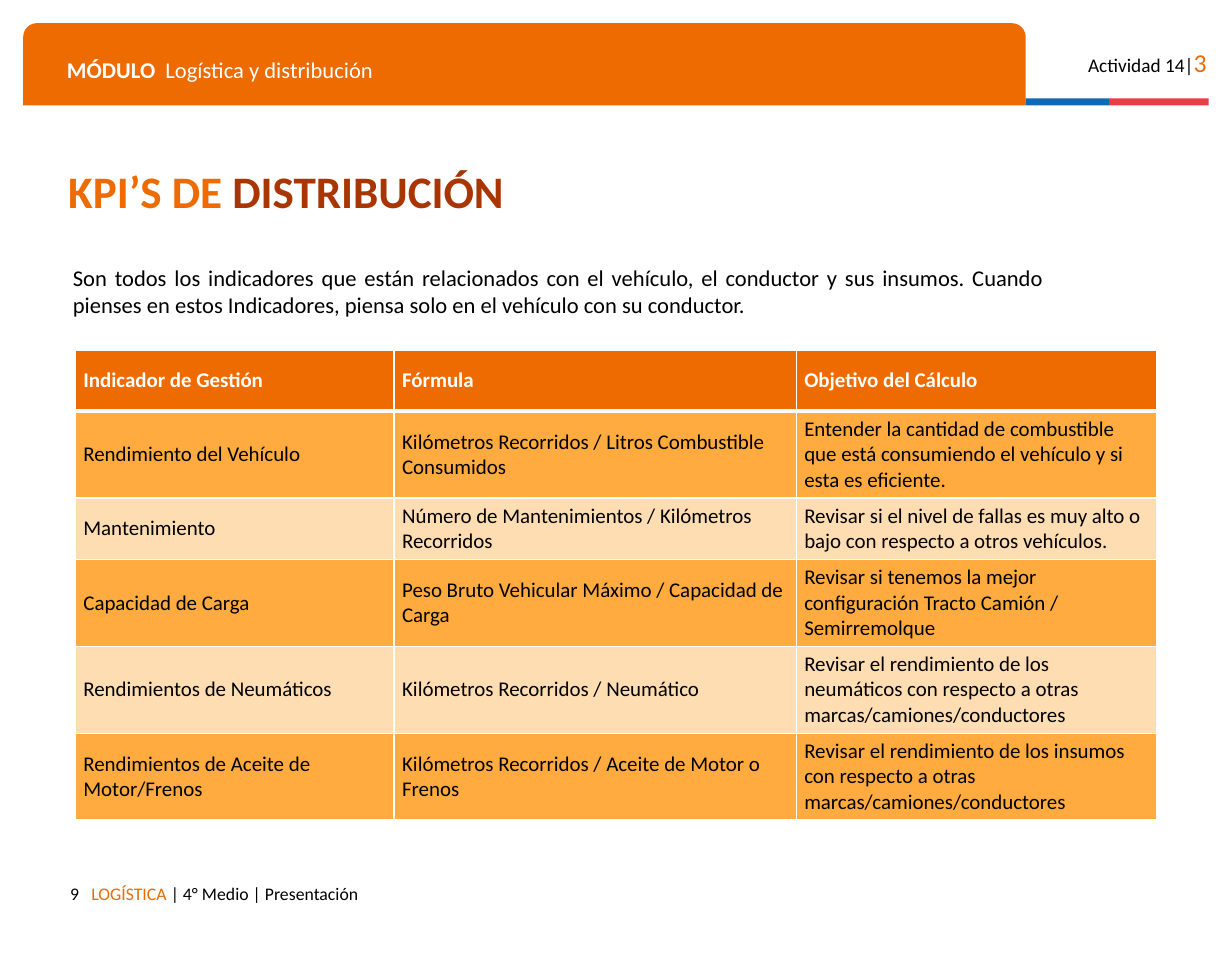
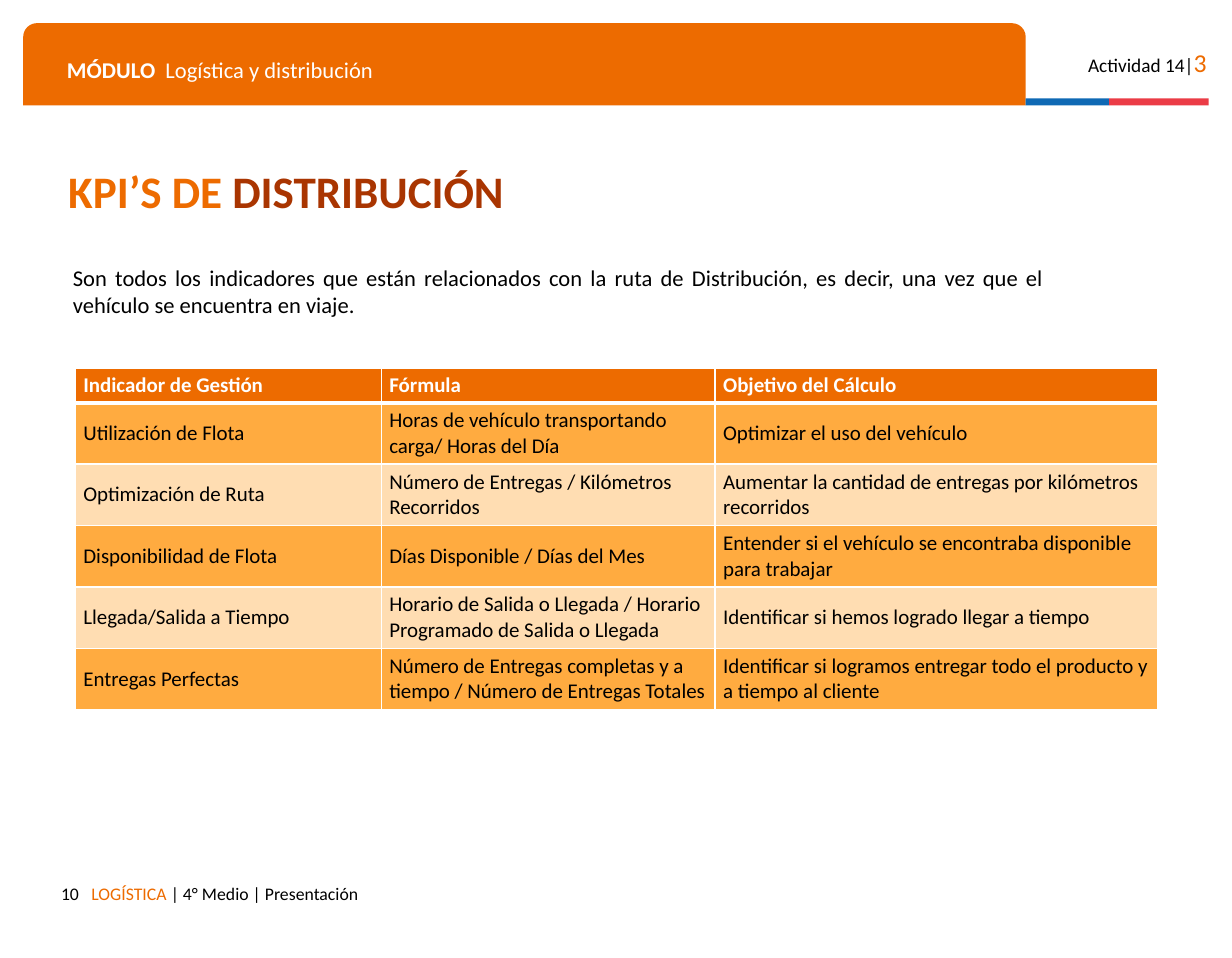
from lxml.etree import SubElement
from pptx import Presentation
from pptx.dml.color import RGBColor
from pptx.enum.shapes import MSO_SHAPE
from pptx.enum.text import MSO_ANCHOR, PP_ALIGN
from pptx.oxml.ns import qn
from pptx.util import Inches, Pt

FONT = "Calibri"
ORANGE, RUST, BLUE, RED = "ED6B00", "A93501", "0F69B4", "EB3C46"
WHITE, BLACK = "FFFFFF", "000000"
ROW_FILLS = ["FFAB40", "FFDDB2"]

TABLE_LEFT = 0.65
TABLE_HEADER = ("Indicador de Gestión", "Fórmula", "Objetivo del Cálculo")
BANDS = [
    (MSO_SHAPE.ROUND_2_SAME_RECTANGLE, (0.2, 0.2, 8.65, 0.71), ORANGE),
    (MSO_SHAPE.RECTANGLE, (8.85, 0.85, 0.72, 0.06), BLUE),
    (MSO_SHAPE.RECTANGLE, (9.57, 0.85, 0.86, 0.06), RED),
]

SLIDES = [
    {
        "number": 9,
        "intro": "Son todos los indicadores que están relacionados con el vehículo, el conductor y sus insumos. "
                 "Cuando pienses en estos Indicadores, piensa solo en el vehículo con su conductor.",
        "top": 3.02,
        "columns": [2.75, 3.47, 3.11],
        "heights": [0.53, 0.75, 0.53, 0.75, 0.75, 0.75],
        "rows": [
            ("Rendimiento del Vehículo",
             "Kilómetros Recorridos / Litros Combustible Consumidos",
             "Entender la cantidad de combustible que está consumiendo el vehículo y si esta es eficiente."),
            ("Mantenimiento",
             "Número de Mantenimientos / Kilómetros Recorridos",
             "Revisar si el nivel de fallas es muy alto o bajo con respecto a otros vehículos."),
            ("Capacidad de Carga",
             "Peso Bruto Vehicular Máximo / Capacidad de Carga",
             "Revisar si tenemos la mejor configuración Tracto Camión / Semirremolque"),
            ("Rendimientos de Neumáticos",
             "Kilómetros Recorridos / Neumático",
             "Revisar el rendimiento de los neumáticos con respecto a otras marcas/camiones/conductores"),
            ("Rendimientos de Aceite de Motor/Frenos",
             "Kilómetros Recorridos / Aceite de Motor o Frenos",
             "Revisar el rendimiento de los insumos con respecto a otras marcas/camiones/conductores"),
        ],
    },
    {
        "number": 10,
        "intro": "Son todos los indicadores que están relacionados con la ruta de Distribución, es decir, "
                 "una vez que el vehículo se encuentra en viaje.",
        "top": 3.18,
        "columns": [2.64, 2.88, 3.82],
        "heights": [0.28] + [0.53] * 5,
        "rows": [
            ("Utilización de Flota",
             "Horas de vehículo transportando carga/ Horas del Día",
             "Optimizar el uso del vehículo"),
            ("Optimización de Ruta",
             "Número de Entregas / Kilómetros Recorridos",
             "Aumentar la cantidad de entregas por kilómetros recorridos"),
            ("Disponibilidad de Flota",
             "Días Disponible / Días del Mes",
             "Entender si el vehículo se encontraba disponible para trabajar"),
            ("Llegada/Salida a Tiempo",
             "Horario de Salida o Llegada / Horario Programado de Salida o Llegada",
             "Identificar si hemos logrado llegar a tiempo"),
            ("Entregas Perfectas",
             "Número de Entregas completas y a tiempo / Número de Entregas Totales",
             "Identificar si logramos entregar todo el producto y a tiempo al cliente"),
        ],
    },
]


def color(value):
    return RGBColor.from_string(value)


def add_run(paragraph, text, size, text_color, bold=False):
    run = paragraph.add_run()
    run.text = text
    run.font.name = FONT
    run.font.size = Pt(size)
    run.font.bold = bold
    run.font.color.rgb = color(text_color)


def add_text(slide, box, runs, align=PP_ALIGN.LEFT, anchor=MSO_ANCHOR.TOP, margin=0.1):
    frame = slide.shapes.add_textbox(*map(Inches, box)).text_frame
    frame.word_wrap = True
    frame.vertical_anchor = anchor
    frame.margin_left = frame.margin_right = Inches(0.1)
    frame.margin_top = frame.margin_bottom = Inches(margin)
    paragraph = frame.paragraphs[0]
    paragraph.alignment = align
    for run in runs:
        add_run(paragraph, *run)
    return paragraph


def add_tab_stop(paragraph, position):
    tabs = SubElement(paragraph._p.get_or_add_pPr(), qn("a:tabLst"))
    SubElement(tabs, qn("a:tab"), pos=str(Inches(position)), algn="l")


def add_frame(slide, number):
    for preset, box, fill in BANDS:
        shape = slide.shapes.add_shape(preset, *map(Inches, box))
        shape.shadow.inherit = False
        shape.fill.solid()
        shape.fill.fore_color.rgb = color(fill)
        shape.line.fill.background()
    module = add_text(slide, (0.48, 0.38, 8.14, 0.35), [
        ("MÓDULO", 14, WHITE, True), ("\tLogística y distribución", 14, WHITE)])
    add_tab_stop(module, 0.85)
    add_text(slide, (0.2, 7.53, 0.58, 0.29), [(str(number), 11, BLACK)], PP_ALIGN.RIGHT)
    add_text(slide, (0.69, 7.53, 7.14, 0.38), [
        ("LOGÍSTICA ", 11, ORANGE), ("| 4° Medio | Presentación", 11, BLACK)])
    add_text(slide, (9.23, 0.3, 1.28, 0.38), [
        ("Actividad 14|", 12, BLACK), ("3", 16, ORANGE)], PP_ALIGN.RIGHT)
    title = add_text(slide, (0.49, 1.51, 9.79, 0.35), [
        ("KPI’S DE ", 28, ORANGE, True), ("DISTRIBUCIÓN", 28, RUST, True)],
        anchor=MSO_ANCHOR.MIDDLE)
    title.line_spacing = 0.8


def add_borders(cell, top, bottom):
    properties = cell._tc.get_or_add_tcPr()
    for side, width in (("L", 1), ("R", 1), ("T", top), ("B", bottom)):
        line = SubElement(properties, qn(f"a:ln{side}"), w=str(Pt(width)))
        SubElement(SubElement(line, qn("a:solidFill")), qn("a:srgbClr"), val=WHITE)


def fill_cell(cell, text, row):
    header = row == 0
    add_borders(cell, 3 if row == 1 else 1, 3 if header else 1)
    cell.fill.solid()
    cell.fill.fore_color.rgb = color(ORANGE if header else ROW_FILLS[(row - 1) % 2])
    cell.vertical_anchor = MSO_ANCHOR.MIDDLE
    cell.margin_left = cell.margin_right = Inches(0.07)
    cell.margin_top = cell.margin_bottom = Inches(0.04)
    add_run(cell.text_frame.paragraphs[0], text, 13, WHITE if header else BLACK, header)


def add_indicators(slide, content):
    columns, heights = content["columns"], content["heights"]
    box = (TABLE_LEFT, content["top"], sum(columns), sum(heights))
    table = slide.shapes.add_table(len(heights), len(columns), *map(Inches, box)).table
    for column, width in zip(table.columns, columns):
        column.width = Inches(width)
    for row, height in zip(table.rows, heights):
        row.height = Inches(height)
    for row, texts in enumerate([TABLE_HEADER, *content["rows"]]):
        for column, text in enumerate(texts):
            fill_cell(table.cell(row, column), text, row)


def main():
    presentation = Presentation()
    presentation.slide_width = Inches(10.63)
    presentation.slide_height = Inches(8.27)
    for content in SLIDES:
        slide = presentation.slides.add_slide(presentation.slide_layouts[6])
        add_frame(slide, content["number"])
        add_text(slide, (0.53, 2.23, 8.58, 0.57), [(content["intro"], 14, BLACK)],
                 PP_ALIGN.JUSTIFY, margin=0.05)
        add_indicators(slide, content)
    presentation.save("out.pptx")


if __name__ == "__main__":
    main()
